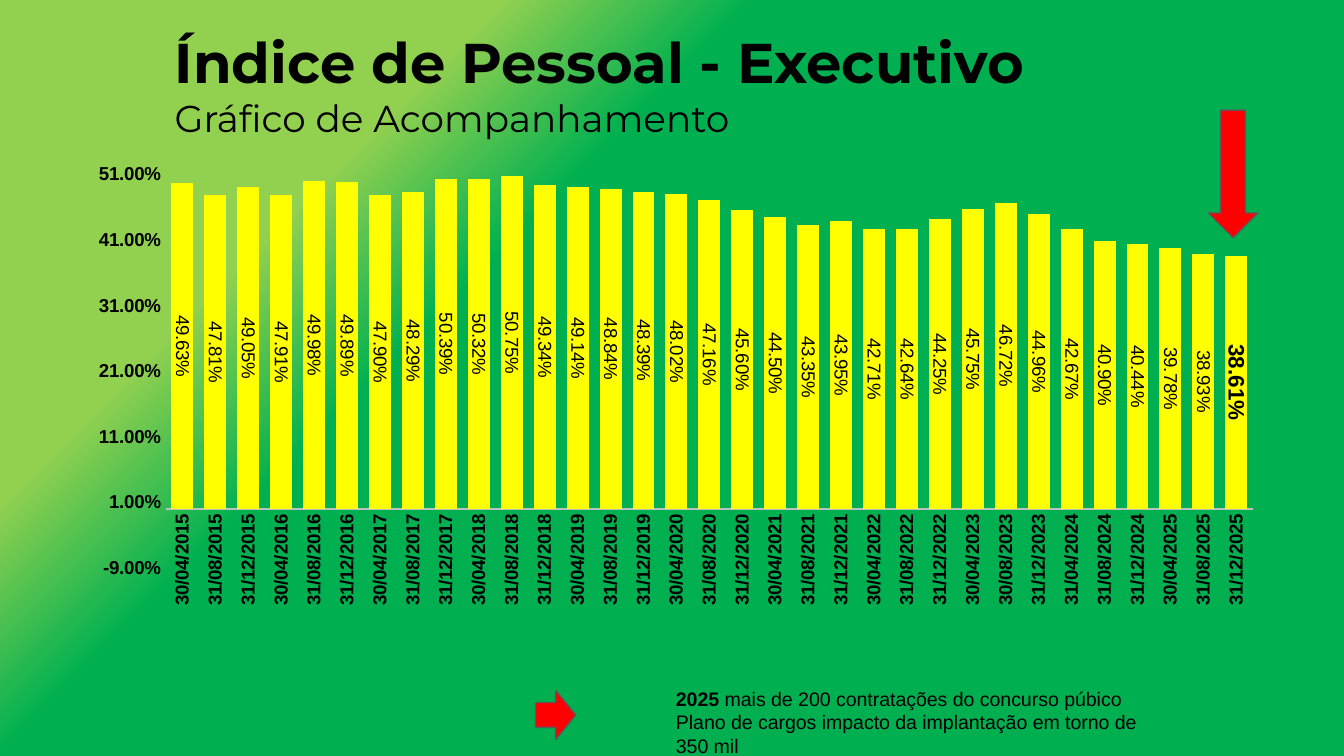
from lxml.etree import SubElement
from pptx import Presentation
from pptx.chart.data import CategoryChartData
from pptx.dml.color import RGBColor
from pptx.enum.chart import XL_CHART_TYPE as ChartType, XL_LABEL_POSITION as LabelPosition, XL_TICK_MARK as TickMark
from pptx.enum.shapes import MSO_SHAPE as Shape
from pptx.enum.text import MSO_ANCHOR as Anchor, MSO_AUTO_SIZE as AutoSize, PP_ALIGN as Align
from pptx.oxml.ns import qn
from pptx.util import Pt

COLORS = {
    "light_green": "92D050",
    "green": "00B050",
    "bar": "FFFF00",
    "arrow": "FF0000",
    "arrow_line": "595959",
    "axis": "BFBFBF",
    "text": "000000",
}
PERCENT = "0.00%"
BACKGROUND_STOPS = [(0, "light_green"), (24, "light_green"), (36, "green"), (100, "green")]
PLOT_LAYOUT = {"x": 0.102, "y": 0.093, "w": 0.854, "h": 0.759}
PERIOD_ENDS = ["30/04", "31/08", "31/12"]
IRREGULAR_DATES = {"30/04/2024": "31/04/2024", "31/08/2023": "30/08/2023"}
STAFF_INDEX = [
    0.4963, 0.4781, 0.4905, 0.4791, 0.4998, 0.4989, 0.4790, 0.4829, 0.5039,
    0.5032, 0.5075, 0.4934, 0.4914, 0.4884, 0.4839, 0.4802, 0.4716, 0.4560,
    0.4450, 0.4335, 0.4395, 0.4271, 0.4264, 0.4425, 0.4575, 0.4672, 0.4496,
    0.4267, 0.4090, 0.4044, 0.3978, 0.3893, 0.3861,
]


def color(name):
    return RGBColor.from_string(COLORS[name])


def format_font(font, size, name="Arial", bold=False):
    font.size = Pt(size)
    font.name = name
    font.bold = bold
    font.color.rgb = color("text")


def add_text(paragraph, text, **font_format):
    run = paragraph.add_run()
    run.text = text
    format_font(run.font, **font_format)


def paint_background(slide):
    fill = slide.background.fill
    fill.gradient()
    fill.gradient_angle = 315
    stops = slide.element.find(".//" + qn("a:gsLst"))
    for stop in list(stops):
        stops.remove(stop)
    for percent, name in BACKGROUND_STOPS:
        stop = SubElement(stops, qn("a:gs"), pos=str(percent * 1000))
        SubElement(stop, qn("a:srgbClr"), val=COLORS[name])


def fill_title(title):
    title.left, title.top, title.width, title.height = Pt(86.4), Pt(10), Pt(584.6), Pt(68.4)
    frame = title.text_frame
    frame.auto_size = AutoSize.NONE
    frame.vertical_anchor = Anchor.BOTTOM
    heading = frame.paragraphs[0]
    heading.alignment = Align.LEFT
    add_text(heading, "Índice de Pessoal - Executivo", size=30, name="Montserrat", bold=True)
    heading.add_line_break()
    add_text(heading, "Gráfico de Acompanhamento", size=20, name="Montserrat")


def add_arrow(slide, left, top, width, height, rotation=0):
    arrow = slide.shapes.add_shape(Shape.DOWN_ARROW, Pt(left), Pt(top), Pt(width), Pt(height))
    arrow.rotation = rotation
    arrow.shadow.inherit = False
    arrow.fill.solid()
    arrow.fill.fore_color.rgb = color("arrow")
    arrow.line.color.rgb = color("arrow_line")
    arrow.line.width = Pt(0.75)


def rotate_labels(chart, path, degrees):
    for body in chart.element.xpath(path):
        body.set("rot", str(degrees * 60000))
        body.set("vert", "horz")


def place_plot(chart):
    plot_area = chart.element.find(".//" + qn("c:plotArea"))
    layout = plot_area.find(qn("c:layout"))
    if layout is None:
        layout = SubElement(plot_area, qn("c:layout"))
        plot_area.insert(0, layout)
    manual = SubElement(layout, qn("c:manualLayout"))
    SubElement(manual, qn("c:layoutTarget"), val="inner")
    for side in "xy":
        SubElement(manual, qn(f"c:{side}Mode"), val="edge")
    for side, share in PLOT_LAYOUT.items():
        SubElement(manual, qn(f"c:{side}"), val=str(share))


def format_axes(chart):
    dates, percents = chart.category_axis, chart.value_axis
    for axis in (dates, percents):
        axis.has_major_gridlines = False
        axis.major_tick_mark = axis.minor_tick_mark = TickMark.NONE
        format_font(axis.tick_labels.font, size=10, bold=True)
    dates.format.line.color.rgb = color("axis")
    dates.format.line.width = Pt(0.75)
    percents.format.line.fill.background()
    percents.minimum_scale, percents.maximum_scale = -0.09, 0.51
    percents.major_unit = 0.1
    percents.tick_labels.number_format = PERCENT
    percents.tick_labels.number_format_is_linked = False


def format_bars(chart):
    plot = chart.plots[0]
    plot.gap_width, plot.overlap = 50, 100
    plot.vary_by_categories = False
    bars = plot.series[0]
    bars.format.fill.solid()
    bars.format.fill.fore_color.rgb = color("bar")
    labels = bars.data_labels
    labels.show_value = True
    labels.position = LabelPosition.CENTER
    labels.number_format = PERCENT
    labels.number_format_is_linked = False
    format_font(labels.font, size=10)
    latest = bars.points[len(STAFF_INDEX) - 1].data_label
    format_font(latest.font, size=12, bold=True)
    latest.position = LabelPosition.CENTER


def add_index_chart(slide):
    history = CategoryChartData(number_format=PERCENT)
    dates = [f"{day}/{year}" for year in range(2015, 2026) for day in PERIOD_ENDS]
    history.categories = [IRREGULAR_DATES.get(date, date) for date in dates]
    history.add_series("Series 1", STAFF_INDEX)
    chart = slide.shapes.add_chart(
        ChartType.COLUMN_STACKED, Pt(19.4), Pt(67.7), Pt(681.8), Pt(277.9), history
    ).chart
    chart.has_title = False
    chart.has_legend = False
    format_font(chart.font, size=10, bold=True)
    format_axes(chart)
    format_bars(chart)
    place_plot(chart)
    rotate_labels(chart, ".//c:catAx/c:txPr/a:bodyPr", -90)
    rotate_labels(chart, ".//c:dLbls//a:bodyPr", 90)


def add_hiring_note(slide):
    frame = slide.shapes.add_textbox(Pt(355), Pt(364.3), Pt(274.3), Pt(45.4)).text_frame
    frame.word_wrap = True
    frame.auto_size = AutoSize.SHAPE_TO_FIT_TEXT
    hiring = frame.paragraphs[0]
    add_text(hiring, "2025 ", size=10.5, bold=True)
    add_text(hiring, "mais de 200 contratações do concurso púbico", size=10.5)
    career_plan = frame.add_paragraph()
    add_text(career_plan, "Plano de cargos impacto da implantação em torno de 350 mil", size=10.5)


def main():
    deck = Presentation()
    deck.slide_width, deck.slide_height = Pt(720), Pt(405)
    slide = deck.slides.add_slide(deck.slide_layouts[5])
    paint_background(slide)
    fill_title(slide.shapes.title)
    add_arrow(slide, 647.3, 59, 26.6, 68.4)
    add_index_chart(slide)
    add_hiring_note(slide)
    add_arrow(slide, 284.4, 372.2, 26.6, 21.6, rotation=270)
    deck.save("out.pptx")


if __name__ == "__main__":
    main()
